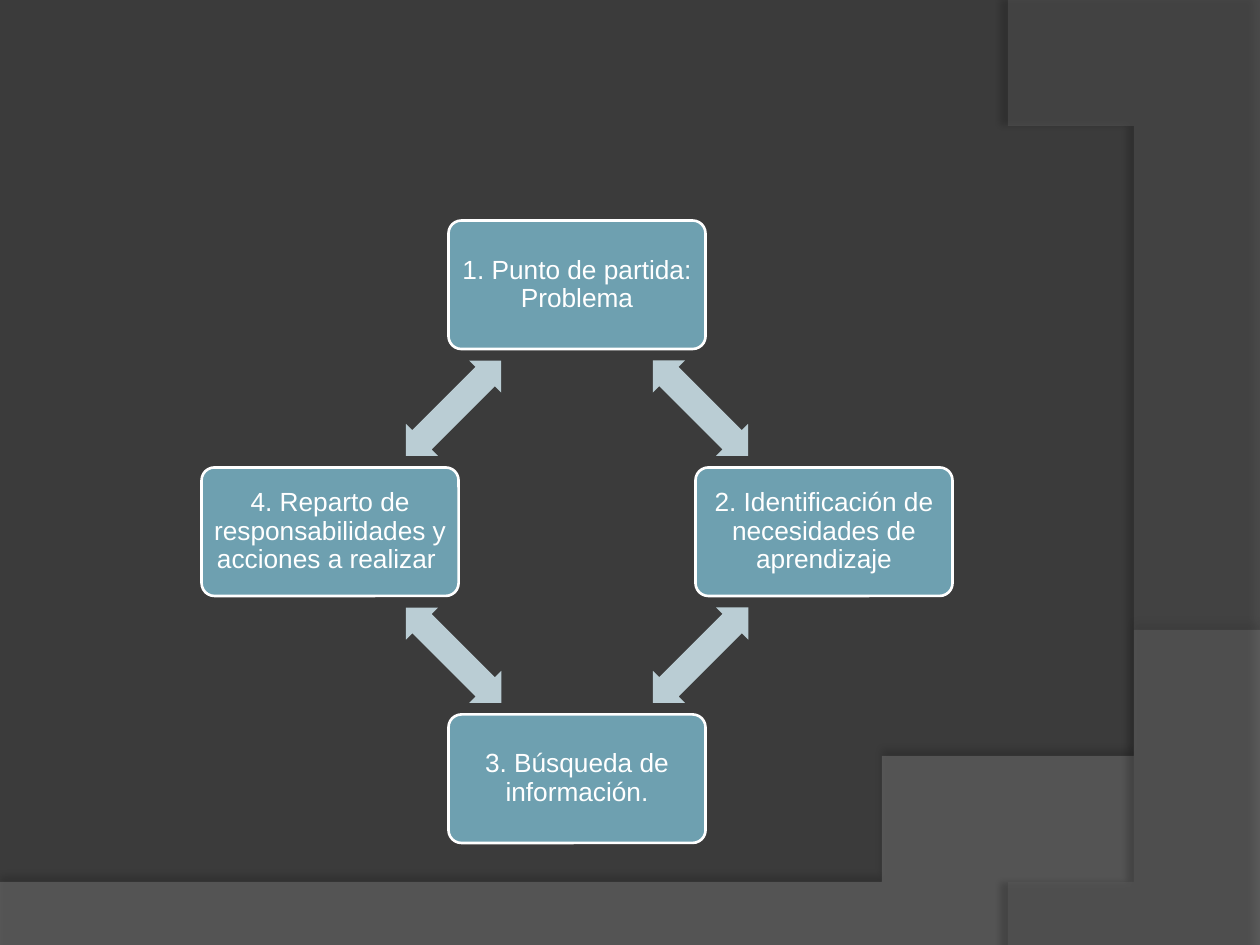
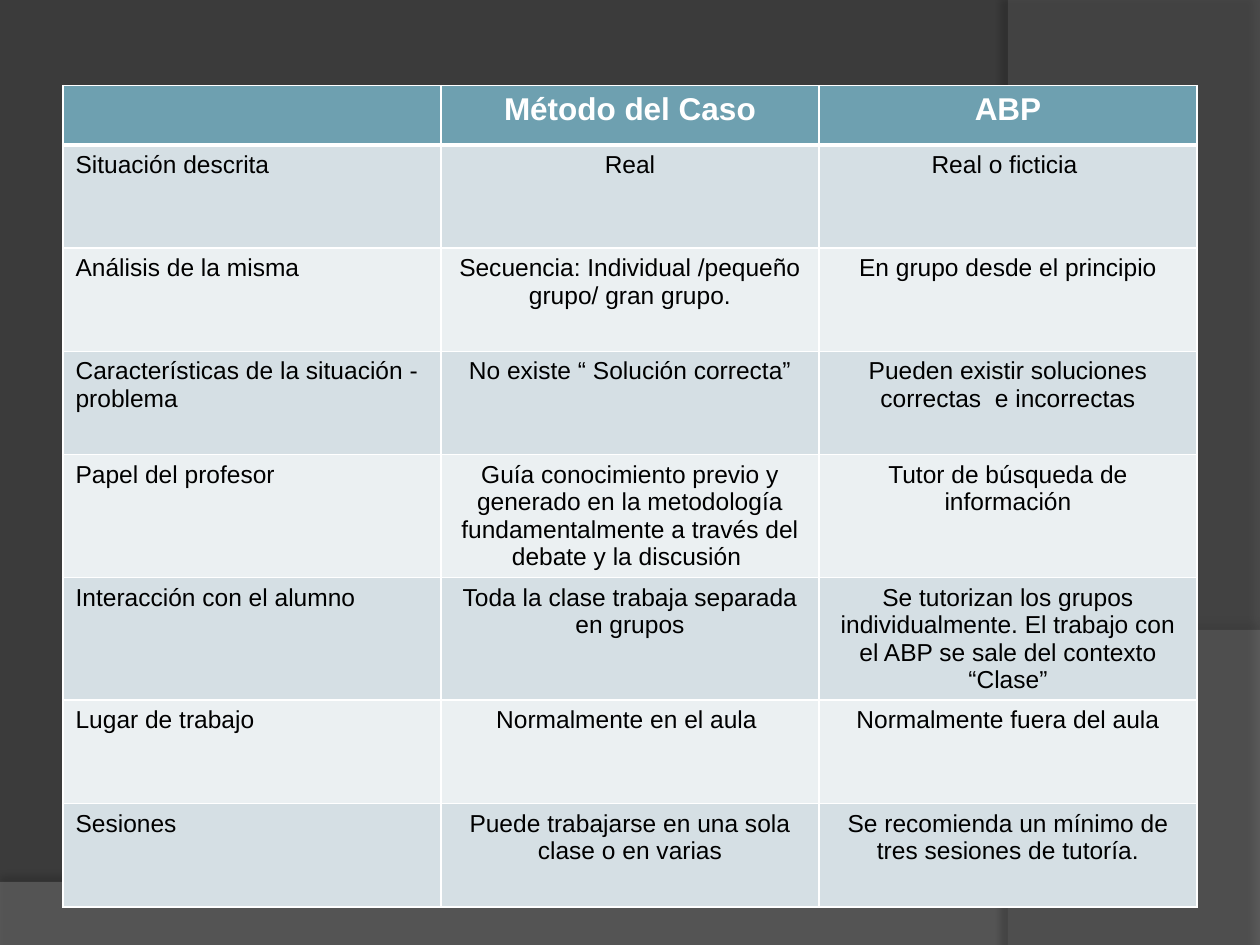
from dataclasses import dataclass

from lxml import etree
from pptx import Presentation
from pptx import util as u
from pptx.dml.color import RGBColor
from pptx.enum import shapes, text
from pptx.oxml import ns

WIDTH, HEIGHT = 10, 7.5  # slide size in inches
FONT = "Arial"
COLORS = {
    "background": "3B3B3B", "wave": "7F7F7F", "arc": "5E5E5E",
    "step": "6EA0B0", "arrow": "BACDD4", "white": "FFFFFF", "black": "000000",
    "odd_row": "D5DFE4", "even_row": "EBF0F2",
}
STEP_TEXT = {"size": u.Pt(15), "name": FONT, "bold": False}
HEADER_TEXT = {"size": u.Pt(18), "name": FONT, "bold": True}
BODY_TEXT = {"size": u.Pt(14), "name": FONT, "bold": False}

Point = tuple[float, float]


@dataclass(frozen=True)
class Swoosh:
    """A translucent outline: straight corners, then one cubic curve."""
    color: str
    opacity: int
    corners: list[Point]
    curve: tuple[Point, Point, Point]  # two control points and the end
    shadow_opacity: int
    shadow_distance: float
    shadow_angle: int


@dataclass(frozen=True)
class Step:
    label: str
    column: int
    row: int


SWOOSHES = [
    Swoosh("wave", 45, [(0, 7.05), (0, HEIGHT), (WIDTH, HEIGHT), (WIDTH, 5.2)],
           ((5.59, 7.29), (3.91, 7.19), (0, 7.05)), 35, 3.5, 270),
    Swoosh("arc", 40, [(WIDTH, 0.02), (WIDTH, HEIGHT), (8.21, HEIGHT)],
           ((9.35, 6.19), (10.18, 3), (8, 0)), 45, 4, 180),
]

# Steps of the cycle, clockwise, on a grid centred on the ring
STEPS = [
    Step("1. Punto de partida: Problema", 0, -1),
    Step("2. Identificación de necesidades de aprendizaje", 1, 0),
    Step("3. Búsqueda de información.", 0, 1),
    Step("4. Reparto de responsabilidades y acciones a realizar ", -1, 0),
]
RING_X, RING_Y, RING_PITCH = 4.58, 4.22, 1.96
STEP_W, STEP_H = 2.04, 1.02
ARROW_W, ARROW_H = 1.07, 0.36

COMPARISON = [
    ("", "Método del Caso", "ABP"),
    ("Situación descrita", "Real", "Real o ficticia "),
    ("Análisis de la misma", "Secuencia: Individual /pequeño grupo/ gran grupo.",
     "En grupo desde el principio"),
    ("Características de la situación - problema", "No existe “ Solución correcta”",
     "Pueden existir soluciones correctas  e incorrectas"),
    ("Papel del profesor",
     "Guía conocimiento previo y generado en la metodología "
     "fundamentalmente a través del debate y la discusión ",
     "Tutor de búsqueda de información"),
    ("Interacción con el alumno", "Toda la clase trabaja separada en grupos",
     "Se tutorizan los grupos individualmente. El trabajo con el ABP "
     "se sale del contexto “Clase”"),
    ("Lugar de trabajo", "Normalmente en el aula ", "Normalmente fuera del aula"),
    ("Sesiones", "Puede trabajarse en una sola clase o en varias",
     "Se recomienda un mínimo de tres sesiones de tutoría."),
]
TABLE_LEFT, TABLE_TOP = 0.05 * WIDTH, 0.68
COLUMN_W, HEADER_H, ROW_H = 0.3 * WIDTH, 0.47, 0.82


def rgb(name: str) -> RGBColor:
    return RGBColor.from_string(COLORS[name])


def apply(target, values: dict) -> None:
    for attribute, value in values.items():
        setattr(target, attribute, value)


def paint(fill, name: str) -> None:
    fill.solid()
    fill.fore_color.rgb = rgb(name)


def add_xml(parent, tag: str, **attributes):
    values = {key: str(value) for key, value in attributes.items()}
    return etree.SubElement(parent, ns.qn(tag), values)


def write(frame, content: str, font: dict, color: str, align) -> None:
    paragraph = frame.paragraphs[0]
    paragraph.alignment = align
    if content:
        run = paragraph.add_run()
        run.text = content
        apply(run.font, font)
        run.font.color.rgb = rgb(color)
    else:
        apply(paragraph.font, font)


# Shared background
def curve_points(start: Point, curve: tuple[Point, Point, Point],
                 count: int = 40) -> list[Point]:
    points = []
    for index in range(1, count + 1):
        t = index / count
        weights = ((1 - t) ** 3, 3 * t * (1 - t) ** 2, 3 * t * t * (1 - t), t ** 3)
        points.append(tuple(sum(w * p[axis] for w, p in zip(weights, (start, *curve)))
                            for axis in (0, 1)))
    return points


def add_swoosh(slide, swoosh: Swoosh):
    start, *corners = swoosh.corners
    builder = slide.shapes.build_freeform(*start, scale=u.Inches(1))
    builder.add_line_segments(corners + curve_points(corners[-1], swoosh.curve))
    outline = builder.convert_to_shape()
    paint(outline.fill, swoosh.color)
    outline.line.fill.background()
    properties = outline._element.spPr
    color = properties.find(".//" + ns.qn("a:srgbClr"))
    add_xml(color, "a:alpha", val=swoosh.opacity * 1000)

    outline.shadow.inherit = False
    shadow = add_xml(properties.find(ns.qn("a:effectLst")), "a:outerShdw",
                     blurRad=u.Pt(4), dist=u.Pt(swoosh.shadow_distance),
                     dir=swoosh.shadow_angle * 60000, algn="ctr", rotWithShape=0)
    shadow_color = add_xml(shadow, "a:srgbClr", val=COLORS["black"])
    add_xml(shadow_color, "a:alpha", val=swoosh.shadow_opacity * 1000)
    return outline


def decorate_layout(layout, slide) -> None:
    """Draw the swooshes and move them to the layout that all slides share."""
    paint(layout.slide_master.background.fill, "background")
    for placeholder in list(layout.placeholders):
        layout.shapes._spTree.remove(placeholder._element)
    for swoosh in SWOOSHES:
        layout.shapes._spTree.append(add_swoosh(slide, swoosh)._element)


# Cycle of steps
def add_centred(slide, kind, center: Point, width: float, height: float, color: str):
    x, y = center
    shape = slide.shapes.add_shape(
        kind, *map(u.Inches, (x - width / 2, y - height / 2, width, height)))
    shape.shadow.inherit = False
    paint(shape.fill, color)
    shape.line.fill.background()
    return shape


def add_step(slide, step: Step, center: Point) -> None:
    box = add_centred(slide, shapes.MSO_SHAPE.ROUNDED_RECTANGLE, center,
                      STEP_W, STEP_H, "step")
    box.adjustments[0] = 0.1
    paint(box.line.fill, "white")
    box.line.width = u.Pt(1.5)
    margins = dict.fromkeys(
        ("margin_left", "margin_right", "margin_top", "margin_bottom"), u.Inches(0.03))
    apply(box.text_frame, {**margins, "word_wrap": True,
                           "vertical_anchor": text.MSO_ANCHOR.MIDDLE})
    write(box.text_frame, step.label, STEP_TEXT, "white", text.PP_ALIGN.CENTER)
    box.text_frame.paragraphs[0].line_spacing = 0.9


def add_cycle(slide) -> None:
    centers = [(RING_X + step.column * RING_PITCH, RING_Y + step.row * RING_PITCH)
               for step in STEPS]
    for index, (step, center) in enumerate(zip(STEPS, centers)):
        add_step(slide, step, center)
        following = centers[(index + 1) % len(centers)]
        middle = tuple((a + b) / 2 for a, b in zip(center, following))
        arrow = add_centred(slide, shapes.MSO_SHAPE.LEFT_RIGHT_ARROW, middle,
                            ARROW_W, ARROW_H, "arrow")
        arrow.adjustments[0], arrow.adjustments[1] = 0.6, 0.5
        arrow.rotation = 45 + 90 * index


# Comparison table
def add_borders(cell, row: int) -> None:
    properties = cell._tc.get_or_add_tcPr()
    heavy = {0: "a:lnB", 1: "a:lnT"}.get(row)  # rule under the header
    for position, side in enumerate(("a:lnL", "a:lnR", "a:lnT", "a:lnB")):
        border = etree.Element(ns.qn(side), w=str(u.Pt(3 if side == heavy else 1)))
        fill = add_xml(border, "a:solidFill")
        add_xml(fill, "a:srgbClr", val=COLORS["white"])
        properties.insert(position, border)


def add_comparison(slide) -> None:
    rows, columns = len(COMPARISON), len(COMPARISON[0])
    heights = [HEADER_H] + [ROW_H] * (rows - 1)
    table = slide.shapes.add_table(
        rows, columns, *map(u.Inches, (TABLE_LEFT, TABLE_TOP, columns * COLUMN_W,
                                       sum(heights)))).table
    for column in table.columns:
        column.width = u.Inches(COLUMN_W)
    for r, (entries, height) in enumerate(zip(COMPARISON, heights)):
        table.rows[r].height = u.Inches(height)
        font, ink = (BODY_TEXT, "black") if r else (HEADER_TEXT, "white")
        shade = ("odd_row" if r % 2 else "even_row") if r else "step"
        for c, entry in enumerate(entries):
            cell = table.cell(r, c)
            paint(cell.fill, shade)
            add_borders(cell, r)
            align = text.PP_ALIGN.CENTER if c else text.PP_ALIGN.LEFT
            write(cell.text_frame, entry, font, ink, align)


def main() -> None:
    prs = Presentation()
    prs.slide_width, prs.slide_height = u.Inches(WIDTH), u.Inches(HEIGHT)
    blank = prs.slide_layouts[6]
    cycle, comparison = (prs.slides.add_slide(blank) for _ in range(2))
    decorate_layout(blank, cycle)
    add_cycle(cycle)
    add_comparison(comparison)
    prs.save("out.pptx")


if __name__ == "__main__":
    main()
